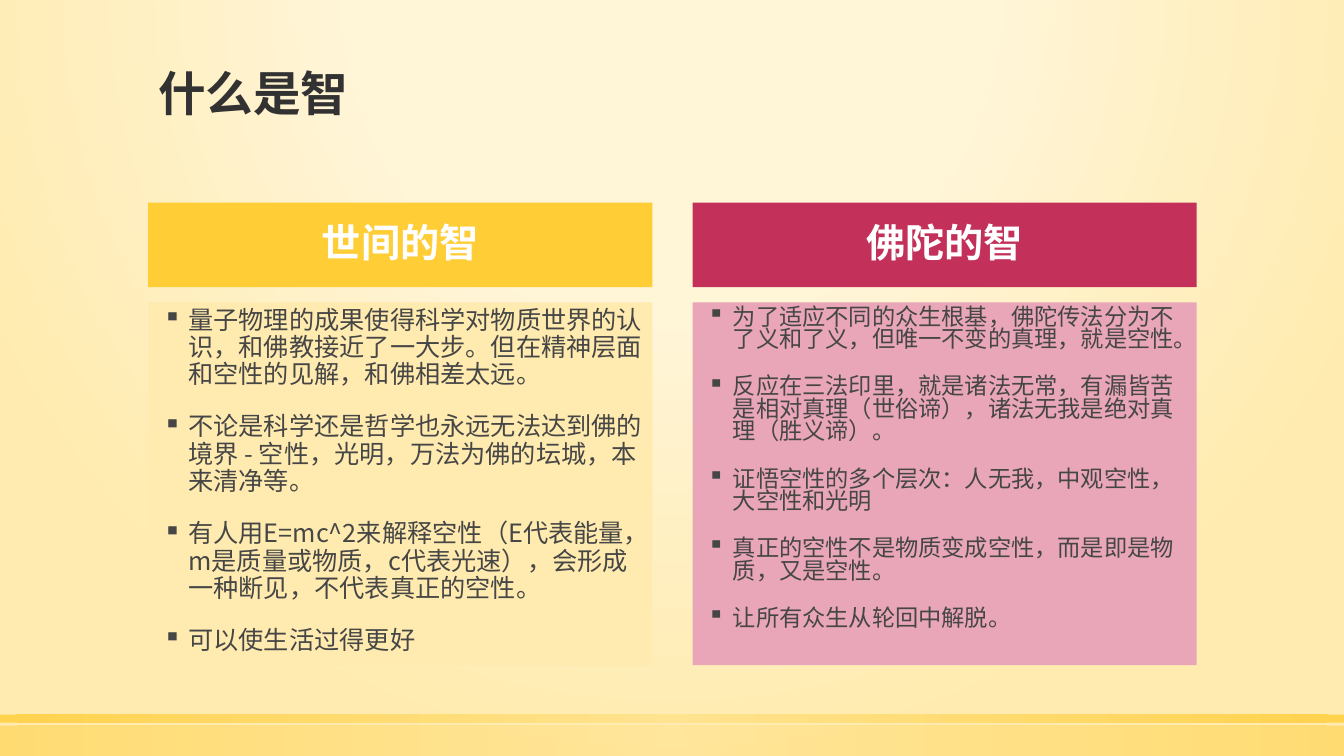
from lxml import etree
from pptx import Presentation
from pptx import util as u
from pptx.dml.color import RGBColor
from pptx.enum import shapes, text
from pptx.oxml import ns

FONT = "Noto Sans CJK SC"
WHITE = RGBColor(0xFF, 0xFF, 0xFF)
TITLE = RGBColor(0x32, 0x32, 0x32)
BODY = RGBColor(0x46, 0x46, 0x46)
CREAM = RGBColor(0xFF, 0xF5, 0xD7)
PALE = RGBColor(0xFF, 0xEB, 0xAF)
LIGHT_GOLD = RGBColor(0xFF, 0xE1, 0x86)
GOLD = RGBColor(0xFF, 0xCD, 0x36)
CRIMSON = RGBColor(0xC3, 0x30, 0x59)
PINK = RGBColor(0xE9, 0xA6, 0xB8)

WIDTH, HEIGHT = 13.33, 7.5
LEFT, COL_W, COL_STEP = 1.47, 5, 5.4

COLUMNS = [
    ("世间的智", GOLD, PALE, {"size": 18, "line_spacing": 0.9}, [
        "量子物理的成果使得科学对物质世界的认识，和佛教接近了一大步。但在精神层面和空性的见解，和佛相差太远。",
        "不论是科学还是哲学也永远无法达到佛的境界 - 空性，光明，万法为佛的坛城，本来清净等。",
        "有人用E=mc^2来解释空性（E代表能量，m是质量或物质，c代表光速），会形成一种断见，不代表真正的空性。",
        "可以使生活过得更好",
    ]),
    ("佛陀的智", CRIMSON, PINK, {"size": 16.6, "line_spacing": 0.8}, [
        "为了适应不同的众生根基，佛陀传法分为不了义和了义，但唯一不变的真理，就是空性。",
        "反应在三法印里，就是诸法无常，有漏皆苦是相对真理（世俗谛），诸法无我是绝对真理（胜义谛）。",
        "证悟空性的多个层次：人无我，中观空性，大空性和光明",
        "真正的空性不是物质变成空性，而是即是物质，又是空性。",
        "让所有众生从轮回中解脱。",
    ]),
]


class Deck:
    def __init__(self):
        self.prs = prs = Presentation()
        prs.slide_width, prs.slide_height = u.Inches(WIDTH), u.Inches(HEIGHT)
        self.s = prs.slides.add_slide(prs.slide_layouts[6])

    def radial(self, fill, owner, stops, focus):
        """Fill with a circular gradient of (position, colour, opacity) stops."""
        fill.gradient()
        grad = owner.xpath(".//a:gradFill")[0]
        for child in list(grad):
            grad.remove(child)
        stop_list = etree.SubElement(grad, ns.qn("a:gsLst"))
        for pos, color, opacity in stops:
            gs = etree.SubElement(stop_list, ns.qn("a:gs"), pos=str(pos * 1000))
            clr = etree.SubElement(gs, ns.qn("a:srgbClr"), val=str(color))
            etree.SubElement(clr, ns.qn("a:alpha"), val=str(opacity * 1000))
        circle = etree.SubElement(grad, ns.qn("a:path"))
        circle.set("path", "circle")
        etree.SubElement(circle, ns.qn("a:fillToRect"),
                         {side: str(v * 1000) for side, v in zip("ltrb", focus)})

    def background(self, stops, focus):
        self.radial(self.s.background.fill, self.s._element, stops, focus)

    def box(self, x, y, w, h, color=None):
        sp = self.s.shapes.add_shape(shapes.MSO_SHAPE.RECTANGLE,
                                     *map(u.Inches, (x, y, w, h)))
        sp.shadow.inherit = False
        sp.line.fill.background()
        if color is not None:
            sp.fill.solid()
            sp.fill.fore_color.rgb = color
        return sp

    def band(self, y, h, opacity):
        sp = self.box(0, y, WIDTH, h)
        self.radial(sp.fill, sp._element,
                    [(0, LIGHT_GOLD, opacity), (100, GOLD, opacity)], (50,) * 4)

    def label(self, x, y, w, h):
        return self.s.shapes.add_textbox(*map(u.Inches, (x, y, w, h)))

    def put_text(self, sp, lines, size, color, anchor, bullet=False, bold=False,
                 align=text.PP_ALIGN.LEFT, line_spacing=0.9):
        tf = sp.text_frame
        for name, value in {"word_wrap": True, "vertical_anchor": anchor,
                            "auto_size": text.MSO_AUTO_SIZE.NONE}.items():
            setattr(tf, name, value)
        for i, line in enumerate(lines):
            p = tf.add_paragraph() if i else tf.paragraphs[0]
            p.alignment, p.line_spacing = align, line_spacing
            if bullet:
                self.bullet(p)
            r = p.add_run()
            r.text = line
            for name, value in {"name": FONT, "size": u.Pt(size), "bold": bold}.items():
                setattr(r.font, name, value)
            r.font.color.rgb = color
            etree.SubElement(r._r.get_or_add_rPr(), ns.qn("a:ea"), typeface=FONT)

    def bullet(self, p):
        p.space_before = u.Pt(18)
        pPr = p._p.get_or_add_pPr()
        pPr.set("marL", str(u.Inches(0.3)))
        pPr.set("indent", str(u.Inches(-0.25)))
        etree.SubElement(pPr, ns.qn("a:buChar"), char="▪")


def main():
    deck = Deck()

    # Background and footer bands
    deck.background([(0, CREAM, 59), (40, CREAM, 66), (100, PALE, 100)],
                    (50, -80, 50, 180))
    deck.band(7.2, 0.3, 50)
    deck.band(7.09, 0.08, 80)

    # Title
    deck.put_text(deck.label(LEFT, 0.51, 10.4, 0.75), ["什么是智"], 34, TITLE,
                  text.MSO_ANCHOR.BOTTOM, bold=True)

    # Two compared columns
    for i, (heading, head_fill, body_fill, style, points) in enumerate(COLUMNS):
        x = LEFT + i * COL_STEP
        deck.put_text(deck.box(x, 2.01, COL_W, 0.84, head_fill), [heading], 28, WHITE,
                      text.MSO_ANCHOR.MIDDLE, bold=True, align=text.PP_ALIGN.CENTER)
        deck.put_text(deck.box(x, 3, COL_W, 3.6, body_fill), points, color=BODY,
                      anchor=text.MSO_ANCHOR.TOP, bullet=True, **style)

    deck.prs.save("out.pptx")


if __name__ == "__main__":
    main()
